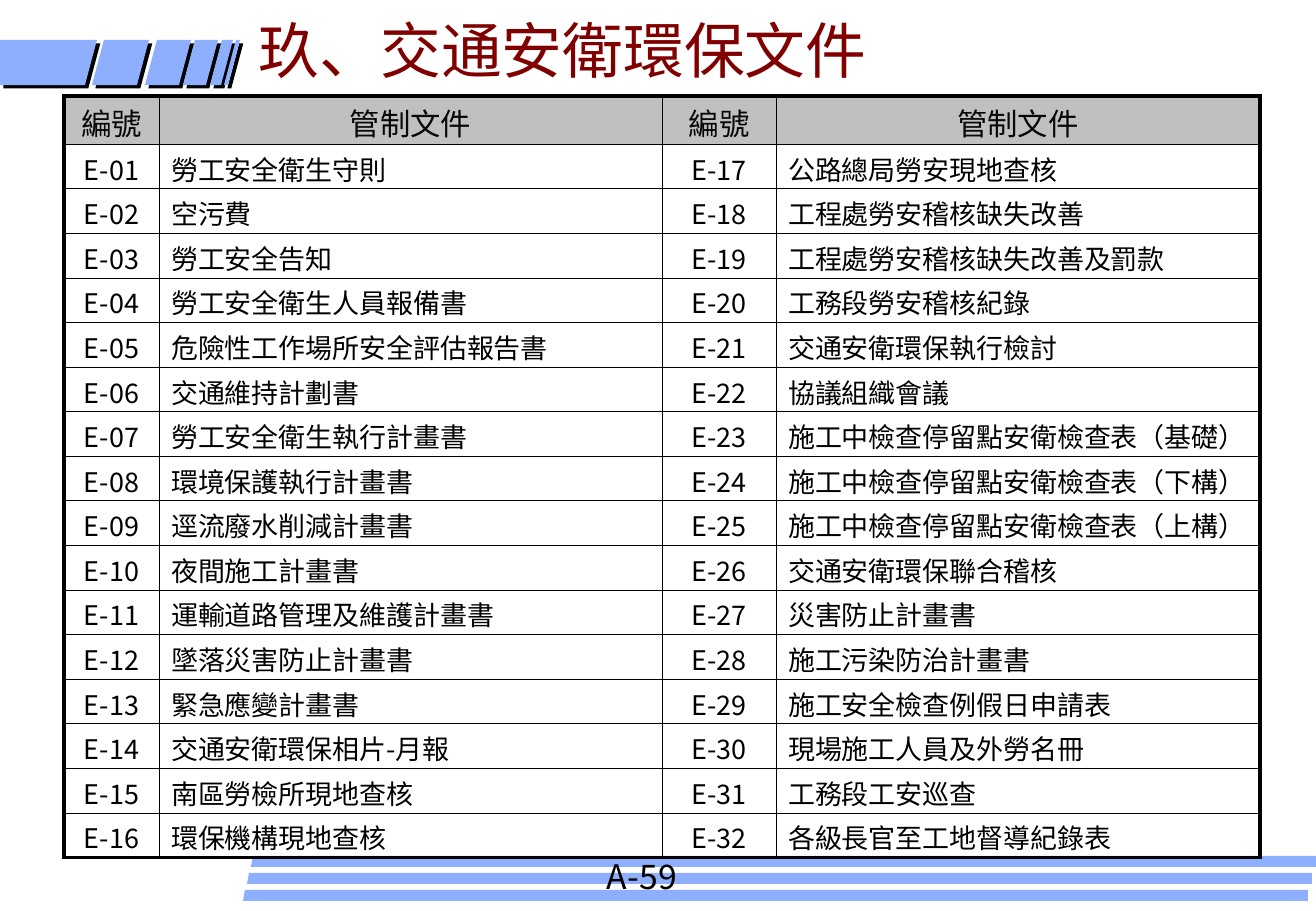
from lxml import etree
from pptx import Presentation
from pptx.dml.color import RGBColor
from pptx.enum.text import PP_ALIGN
from pptx.oxml.ns import qn
from pptx.util import Pt

TITLE = "玖、交通安衛環保文件"
PAGE_LABEL = "A-59"
HEADERS = ["編號", "管制文件"]
DOCUMENTS = [
    "勞工安全衛生守則", "空污費", "勞工安全告知", "勞工安全衛生人員報備書",
    "危險性工作場所安全評估報告書", "交通維持計劃書", "勞工安全衛生執行計畫書",
    "環境保護執行計畫書", "逕流廢水削減計畫書", "夜間施工計畫書",
    "運輸道路管理及維護計畫書", "墜落災害防止計畫書", "緊急應變計畫書",
    "交通安衛環保相片-月報", "南區勞檢所現地查核", "環保機構現地查核",
    "公路總局勞安現地查核", "工程處勞安稽核缺失改善", "工程處勞安稽核缺失改善及罰款",
    "工務段勞安稽核紀錄", "交通安衛環保執行檢討", "協議組織會議",
    "施工中檢查停留點安衛檢查表（基礎）", "施工中檢查停留點安衛檢查表（下構）",
    "施工中檢查停留點安衛檢查表（上構）", "交通安衛環保聯合稽核", "災害防止計畫書",
    "施工污染防治計畫書", "施工安全檢查例假日申請表", "現場施工人員及外勞名冊",
    "工務段工安巡查", "各級長官至工地督導紀錄表",
]

FONT = "Noto Sans CJK SC"
BLACK = RGBColor(0x00, 0x00, 0x00)
HEADER_TEXT = RGBColor(0x08, 0x08, 0x08)
HEADER_FILL = RGBColor(0xC0, 0xC0, 0xC0)
MAROON = RGBColor(0x80, 0x00, 0x00)
BLUE = RGBColor(0x8D, 0xAF, 0xFE)
LEFT, CENTER = PP_ALIGN.LEFT, PP_ALIGN.CENTER

EMU_PER_PX = 914400 / 121.5
SLIDE_WIDTH, SLIDE_HEIGHT = 1316, 911
TABLE_LEFT, TABLE_TOP, TABLE_HEIGHT = 64, 96, 762
COLUMN_WIDTHS = [95, 503, 114, 484]
HEADER_HEIGHT = 48
HEADER_MARGIN, BODY_MARGIN = 4, 5
OUTER_LINE, INNER_LINE = 2.25, 0.25

BAR_TOP, BAR_BOTTOM, BAR_SLANT = 40, 85, 12
BARS = [(92, 45), (145, 34), (183, 23), (210, 11), (224, 4)]  # bottom left, width
STRIPE_COUNT, STRIPE_TOP, STRIPE_PITCH, STRIPE_HEIGHT = 3, 856, 17, 11
STRIPE_LEFT, STRIPE_SHIFT, STRIPE_SLANT = 251, 4, 2


def px(length):
    return round(length * EMU_PER_PX)


def write(text_frame, text, size, color, alignment=LEFT):
    paragraph = text_frame.paragraphs[0]
    paragraph.text = text
    paragraph.alignment = alignment
    font = paragraph.font
    font.name, font.size, font.color.rgb = FONT, Pt(size), color
    latin = next(paragraph._p.iter(qn("a:latin")))
    east_asian = etree.Element(qn("a:ea"), typeface=FONT)
    latin.addnext(east_asian)


def add_label(slide, box, text, size, color):
    text_frame = slide.shapes.add_textbox(*map(px, box)).text_frame
    text_frame.word_wrap = True
    write(text_frame, text, size, color)


def add_polygon(slide, points, shadow=False):
    builder = slide.shapes.build_freeform(*points[0], scale=EMU_PER_PX)
    builder.add_line_segments(points[1:], close=True)
    shape = builder.convert_to_shape()
    shape.fill.solid()
    shape.fill.fore_color.rgb = BLUE
    shape.line.fill.background()
    shape.shadow.inherit = False
    if shadow:
        effects = shape._element.spPr.find(qn("a:effectLst"))
        outer = etree.SubElement(effects, qn("a:outerShdw"), blurRad="0",
                                 dist=str(Pt(2.8)), dir="2700000", algn="ctr", rotWithShape="0")
        etree.SubElement(outer, qn("a:srgbClr"), val=str(BLACK))


def add_decoration(slide):
    for index in range(STRIPE_COUNT):
        top = STRIPE_TOP + index * STRIPE_PITCH
        bottom = top + STRIPE_HEIGHT
        left = STRIPE_LEFT - index * STRIPE_SHIFT
        right = SLIDE_WIDTH - index * STRIPE_SHIFT
        add_polygon(slide, [(left, bottom), (right, bottom), (right, top),
                            (left + STRIPE_SLANT, top)])
    add_polygon(slide, [(0, BAR_TOP), (97, BAR_TOP), (85, BAR_BOTTOM), (0, BAR_BOTTOM)], True)
    for left, width in BARS:
        right = left + width
        add_polygon(slide, [(left + BAR_SLANT, BAR_TOP), (left, BAR_BOTTOM),
                            (right, BAR_BOTTOM), (right + BAR_SLANT, BAR_TOP)], True)


def set_borders(cell, outer_edges):
    """Draw four borders; outer_edges maps each side to whether it is on the table's rim."""
    properties = cell._tc.get_or_add_tcPr()
    for side, is_outer in outer_edges.items():
        width = Pt(OUTER_LINE if is_outer else INNER_LINE)
        line = etree.SubElement(properties, qn(f"a:ln{side}"), w=str(width))
        fill = etree.SubElement(line, qn("a:solidFill"))
        etree.SubElement(fill, qn("a:srgbClr"), val=str(BLACK))


def add_document_table(slide):
    half = len(DOCUMENTS) // 2
    codes = [f"E-{number:02d}" for number in range(1, len(DOCUMENTS) + 1)]
    rows = [HEADERS * 2] + [
        [codes[i], DOCUMENTS[i], codes[i + half], DOCUMENTS[i + half]] for i in range(half)
    ]
    last_row, last_column = len(rows) - 1, len(COLUMN_WIDTHS) - 1
    table = slide.shapes.add_table(
        len(rows), len(COLUMN_WIDTHS), px(TABLE_LEFT), px(TABLE_TOP),
        px(sum(COLUMN_WIDTHS)), px(TABLE_HEIGHT)).table
    table.first_row = table.horz_banding = False
    for column, width in zip(table.columns, COLUMN_WIDTHS):
        column.width = px(width)
    body_height = (TABLE_HEIGHT - HEADER_HEIGHT) / half
    for r, texts in enumerate(rows):
        is_header = r == 0
        table.rows[r].height = px(HEADER_HEIGHT if is_header else body_height)
        for c, text in enumerate(texts):
            cell = table.cell(r, c)
            cell.margin_top = px(HEADER_MARGIN if is_header else BODY_MARGIN)
            cell.margin_bottom = 0
            set_borders(cell, {"L": c == 0, "R": c == last_column,
                               "T": is_header, "B": r == last_row})
            if is_header:
                cell.fill.solid()
                cell.fill.fore_color.rgb = HEADER_FILL
                write(cell.text_frame, text, 18, HEADER_TEXT, CENTER)
            else:
                cell.fill.background()
                write(cell.text_frame, text, 16, BLACK, LEFT if c % 2 else CENTER)


def main():
    presentation = Presentation()
    presentation.slide_width, presentation.slide_height = px(SLIDE_WIDTH), px(SLIDE_HEIGHT)
    slide = presentation.slides.add_slide(presentation.slide_layouts[6])
    add_decoration(slide)
    add_label(slide, (595, 850, 147, 61), PAGE_LABEL, 20, BLACK)
    add_document_table(slide)
    add_label(slide, (247, 7, 659, 100), TITLE, 36, MAROON)
    presentation.save("out.pptx")


if __name__ == "__main__":
    main()
